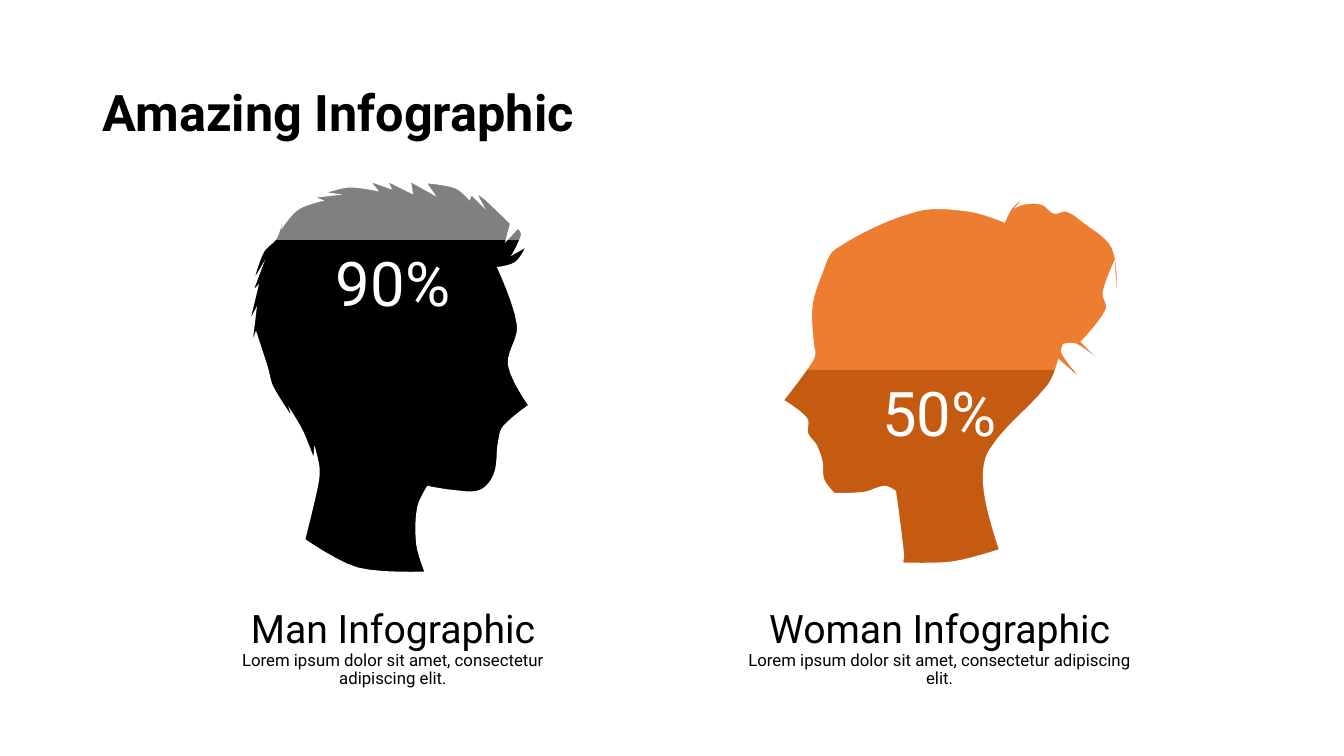
from math import dist

from pptx import Presentation
from pptx.dml.color import RGBColor
from pptx.enum.shapes import MSO_SHAPE
from pptx.enum.text import MSO_ANCHOR, PP_ALIGN
from pptx.util import Cm, Pt

LOREM = "Lorem ipsum dolor sit amet, consectetur adipiscing elit."
UNIT = Cm(0.0254)  # outlines are drawn on a grid of 100 units to the inch
CURVE_STEPS = 6
GENTLE_TURN = 0.6  # cosine of the sharpest turn that is still rounded

MAN_OUTLINE = [
    (369, 181), (376, 190), (347, 186), (325, 191), (340, 193), (314, 196),
    (322, 199), (296, 208), (279, 228), (282, 212), (275, 236), (262, 250),
    (253, 275), (263, 258), (252, 287), (257, 282), (249, 315), (255, 304),
    (251, 337), (254, 328), (266, 365), (271, 383), (289, 412), (286, 403),
    (300, 426), (311, 453), (312, 442), (317, 463), (316, 480), (303, 535),
    (355, 563), (421, 567), (413, 540), (414, 503), (424, 482), (449, 486),
    (476, 486), (490, 470), (494, 439), (499, 423), (524, 402), (504, 362),
    (513, 323), (493, 265), (511, 260), (521, 246), (507, 254), (517, 233),
    (514, 227), (501, 241), (506, 222), (481, 198), (474, 193), (482, 208),
    (468, 194), (466, 199), (452, 187), (424, 182), (433, 195), (408, 181),
    (410, 193), (386, 181), (389, 188),
]
WOMAN_OUTLINE = [
    (1004, 207), (997, 221), (962, 210), (909, 210), (829, 247), (816, 271),
    (806, 305), (808, 344), (803, 337), (809, 348), (806, 359), (778, 397),
    (801, 415), (802, 430), (810, 441), (816, 457), (818, 476), (828, 489),
    (857, 488), (878, 482), (889, 487), (897, 550), (896, 558), (945, 557),
    (991, 545), (976, 487), (981, 447), (1040, 381), (1050, 356), (1071, 374),
    (1053, 350), (1055, 341), (1068, 341), (1090, 357), (1072, 339),
    (1097, 307), (1094, 290), (1106, 258), (1108, 289), (1103, 246),
    (1075, 221), (1058, 210), (1046, 212), (1033, 203), (1016, 203),
    (1006, 207), (1015, 197),
]


def color(hex_code):
    return RGBColor.from_string(hex_code)


def add_text(para, text, size=12, ink="000000", bold=False, align=PP_ALIGN.CENTER, spacing=None):
    para.alignment = align
    para.line_spacing = spacing
    span = para.add_run()
    span.text = text
    span.font.name = "Roboto"
    span.font.size = Pt(size)
    span.font.bold = bold
    span.font.color.rgb = color(ink)


def direction(start, end):
    length = dist(start, end)
    return (end[0] - start[0]) / length, (end[1] - start[1]) / length


def tangent(before, point, after):
    """Direction of the curve at a point, or zero where the point is a corner."""
    arriving, leaving = direction(before, point), direction(point, after)
    cosine = arriving[0] * leaving[0] + arriving[1] * leaving[1]
    return direction(before, after) if cosine > GENTLE_TURN else (0, 0)


def smooth(outline):
    """Round the gentle turns of a closed outline and keep its sharp corners."""
    count = len(outline)
    tangents = [tangent(outline[i - 1], outline[i], outline[(i + 1) % count])
                for i in range(count)]
    points = []
    for i, start in enumerate(outline):
        following = (i + 1) % count
        end = outline[following]
        reach = dist(start, end) / 3
        for step in range(CURVE_STEPS):
            t = step / CURVE_STEPS
            u = 1 - t
            points.append(tuple(
                u**3 * a + 3 * u * u * t * (a + reach * out)
                + 3 * u * t * t * (b - reach * into) + t**3 * b
                for a, b, out, into in zip(start, end, tangents[i], tangents[following])))
    return points


class Slide:
    def __init__(self, deck):
        self.page = deck.slides.add_slide(deck.slide_layouts[6])

    def paint(self, shape, fill):
        shape.shadow.inherit = False
        shape.fill.solid()
        shape.fill.fore_color.rgb = color(fill)
        shape.line.fill.background()

    def rectangle(self, left, top, width, height, fill, label=None):
        box = self.page.shapes.add_shape(
            MSO_SHAPE.RECTANGLE, Cm(left), Cm(top), Cm(width), Cm(height))
        self.paint(box, fill)
        if label:
            box.text_frame.vertical_anchor = MSO_ANCHOR.TOP
            add_text(box.text_frame.paragraphs[0], label, size=44, ink="FFFFFF")

    def window(self, left, right, outline, top=80, bottom=675):
        """White panel with the outline cut out of it."""
        frame = [(left, top), (right, top), (right, bottom), (left, bottom)]
        builder = None
        for contour in (smooth(outline), frame):
            start, *others = [(x * UNIT, y * UNIT) for x, y in contour]
            if builder is None:
                builder = self.page.shapes.build_freeform(*start)
            else:
                builder.move_to(*start)
            builder.add_line_segments(others, close=True)
        self.paint(builder.convert_to_shape(), "FFFFFF")

    def text_box(self, left, top, width, height, lines, anchor=MSO_ANCHOR.TOP):
        box = self.page.shapes.add_textbox(Cm(left), Cm(top), Cm(width), Cm(height))
        frame = box.text_frame
        frame.word_wrap = True
        frame.vertical_anchor = anchor
        for index, (text, style) in enumerate(lines):
            para = frame.add_paragraph() if index else frame.paragraphs[0]
            add_text(para, text, **style)

    def caption(self, left, width, height, heading):
        self.text_box(left, 15.11, width, height,
                      [(heading, {"size": 28}), (LOREM, {"spacing": 0.9})])


def main():
    deck = Presentation()
    deck.slide_width, deck.slide_height = Cm(33.87), Cm(19.05)
    slide = Slide(deck)
    slide.rectangle(18.29, 4.78, 10.8, 15.65, "ED7D31")
    slide.rectangle(4.52, 4.29, 10.8, 15.65, "808080")
    slide.rectangle(5.23, 6.05, 9.35, 15.65, "000000", "90%")
    slide.rectangle(19, 9.32, 9.35, 15.65, "C55A11", "50%")
    slide.window(645, 1220, WOMAN_OUTLINE)
    slide.window(102, 678, MAN_OUTLINE)
    slide.rectangle(2.59, 16.81, 28.4, 2.95, "FFFFFF")
    slide.caption(5.23, 9.35, 2.39, "Man Infographic")
    slide.caption(18.42, 10.52, 1.9, "Woman Infographic")
    title_style = {"size": 36, "bold": True, "align": PP_ALIGN.LEFT, "spacing": 0.9}
    slide.text_box(2.34, 2.03, 29.21, 1.73, [("Amazing Infographic", title_style)],
                   MSO_ANCHOR.MIDDLE)
    deck.save("out.pptx")


if __name__ == "__main__":
    main()
